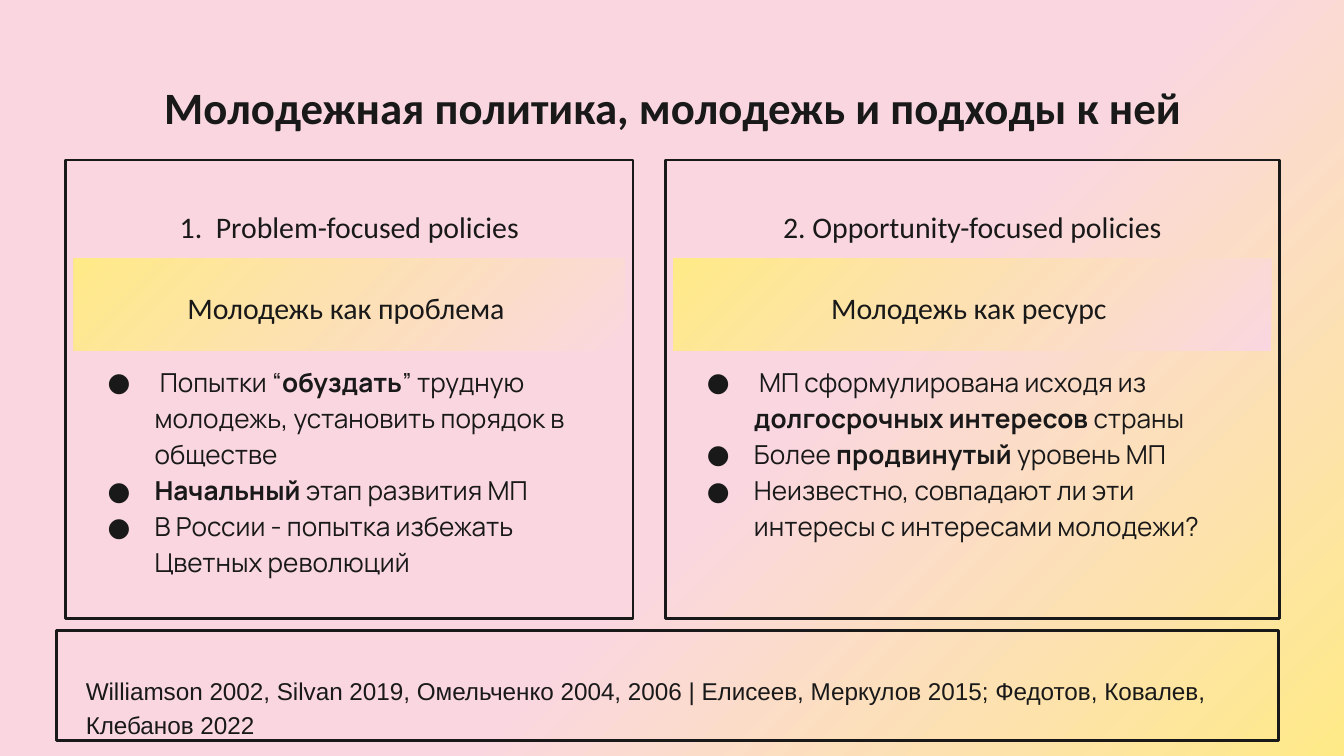
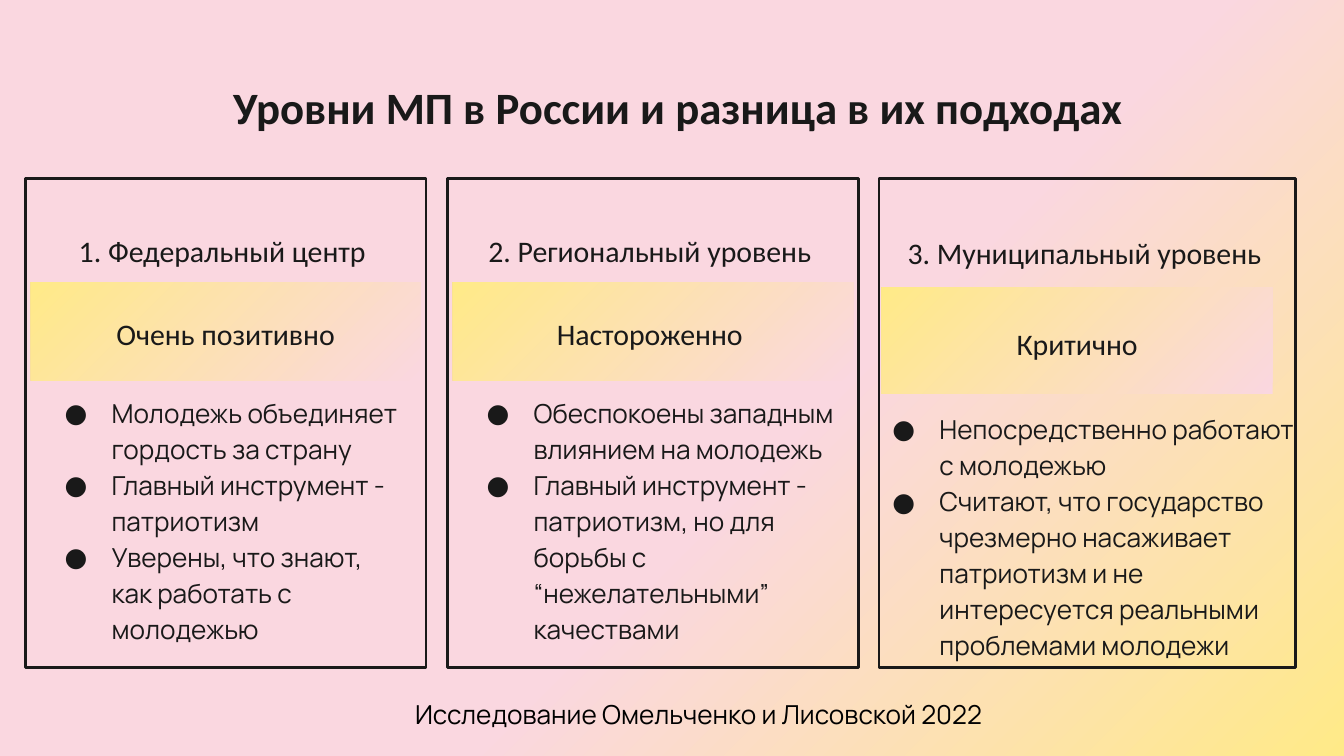
from copy import deepcopy

from lxml import etree
from pptx import Presentation
from pptx.dml.color import RGBColor
from pptx.enum.shapes import MSO_SHAPE
from pptx.enum.text import MSO_ANCHOR, MSO_AUTO_SIZE, PP_ALIGN
from pptx.oxml.ns import qn
from pptx.util import Inches, Pt

RECTANGLE = MSO_SHAPE.RECTANGLE
TOP, MIDDLE, BOTTOM = MSO_ANCHOR.TOP, MSO_ANCHOR.MIDDLE, MSO_ANCHOR.BOTTOM
LEFT, CENTER = PP_ALIGN.LEFT, PP_ALIGN.CENTER

INK = RGBColor(0x19, 0x19, 0x19)
BLACK = RGBColor(0, 0, 0)
PINK = RGBColor(0xFA, 0xD7, 0xE0)
YELLOW = RGBColor(0xFF, 0xEA, 0x88)

TWO_CONTENT, COMPARISON = 3, 4
TITLE_BOX = (0.79, 0.49, 8.43, 0.63)
GRADIENT_ANGLE = 135

TEXT_FRAME = {
    "word_wrap": True,
    "auto_size": MSO_AUTO_SIZE.NONE,
    "margin_left": Inches(0.1),
    "margin_right": Inches(0.1),
    "margin_top": Inches(0.1),
    "margin_bottom": Inches(0.1),
}
PARAGRAPH = {"space_before": Pt(0), "space_after": Pt(0)}
TITLE_FONT = {"name": "Calibri", "size": Pt(24), "bold": True}
HEADING_FONT = {"name": "Calibri", "size": Pt(16), "bold": False}
LIST_FONT = {"name": "Manrope", "size": Pt(14), "bold": False}
SOURCE_FONT = {"name": "Arial", "size": Pt(13), "bold": False}


def apply(target, values):
    for name, value in values.items():
        setattr(target, name, value)


def inches(box):
    return [Inches(length) for length in box]


def place(shape, box):
    apply(shape, dict(zip(("left", "top", "width", "height"), inches(box))))


def fill_gradient(fill, start, end, end_position=1.0):
    fill.gradient()
    fill.gradient_angle = GRADIENT_ANGLE
    first, last = fill.gradient_stops
    first.color.rgb, first.position = start, 0
    last.color.rgb, last.position = end, end_position


def set_background(master):
    """Yellow corner fading to pink, shared by all slides."""
    fill_gradient(master.background.fill, YELLOW, PINK, 0.42)
    stops = master.element.find(".//" + qn("p:bgPr")).find(".//" + qn("a:gsLst"))
    pink_end = deepcopy(stops[-1])
    pink_end.set("pos", "100000")
    stops.append(pink_end)


def add_bullet(paragraph):
    properties = paragraph._p.get_or_add_pPr()
    properties.set("marL", str(Inches(0.5)))
    properties.set("indent", str(-Inches(0.35)))
    colour = etree.SubElement(properties, qn("a:buClr"))
    etree.SubElement(colour, qn("a:srgbClr"), val=str(INK))
    etree.SubElement(properties, qn("a:buFont"), typeface="Manrope")
    etree.SubElement(properties, qn("a:buChar"), char="●")


def write(shape, lines, font, align=LEFT, anchor=TOP, spacing=1.15,
          color=INK, bullets=False):
    """Fill a shape with paragraphs; text between asterisks is bold."""
    frame = shape.text_frame
    apply(frame, {**TEXT_FRAME, "vertical_anchor": anchor})
    for number, line in enumerate(lines):
        paragraph = frame.add_paragraph() if number else frame.paragraphs[0]
        apply(paragraph, {**PARAGRAPH, "alignment": align, "line_spacing": spacing})
        if bullets:
            add_bullet(paragraph)
        for part, text in enumerate(line.split("*")):
            if text:
                run = paragraph.add_run()
                run.text = text
                apply(run.font, font)
                run.font.color.rgb = color
                if part % 2:
                    run.font.bold = True


def add_text(slide, box, text, font, **layout):
    write(slide.shapes.add_textbox(*inches(box)), [text], font, **layout)


def add_frame(slide, box):
    frame = slide.shapes.add_shape(RECTANGLE, *inches(box))
    frame.shadow.inherit = False
    frame.fill.background()
    frame.line.color.rgb = INK
    frame.line.width = Pt(1.5)


def add_band(slide, box, text):
    band = slide.shapes.add_shape(RECTANGLE, *inches(box))
    band.shadow.inherit = False
    band.line.fill.background()
    fill_gradient(band.fill, PINK, YELLOW)
    write(band, [text], HEADING_FONT, align=CENTER, anchor=MIDDLE)


def stack_boxes(frame, inset, row, overlap, list_height):
    """Frame, heading, band and list boxes, stacked inside the frame."""
    left, top, width, _ = frame
    left, top, width = left + inset, top + 0.04, width - 2 * inset
    return (
        frame,
        (left, top, width, row),
        (left, top + row, width, row),
        (left, top + 2 * row - overlap, width, list_height),
    )


def add_panel(slide, list_holder, boxes, heading, attitude, points):
    frame_box, heading_box, band_box, list_box = boxes
    add_frame(slide, frame_box)
    place(list_holder, list_box)
    write(list_holder, points, LIST_FONT, bullets=True)
    add_band(slide, band_box, attitude)
    add_text(slide, heading_box, heading, HEADING_FONT, align=CENTER, anchor=BOTTOM)


def add_slide(deck, layout, title, panels):
    slide = deck.slides.add_slide(deck.slide_layouts[layout])
    place(slide.shapes.title, TITLE_BOX)
    write(slide.shapes.title, [title], TITLE_FONT, align=CENTER, spacing=1.0)
    holders = list(slide.placeholders)[1:]
    for holder, panel in zip(holders, panels):
        add_panel(slide, holder, *panel)
    for unused in holders[len(panels):]:
        unused.element.getparent().remove(unused.element)
    return slide


def add_approaches(deck):
    size = {"inset": 0.06, "row": 0.69, "overlap": 0.02, "list_height": 1.85}
    slide = add_slide(deck, TWO_CONTENT, "Молодежная политика, молодежь и подходы к ней", [
        (stack_boxes((0.49, 1.19, 4.22, 3.41), **size),
         "1.  Problem-focused policies", "Молодежь как проблема ",
         [" Попытки “*обуздать*” трудную молодежь, установить порядок в обществе",
          "*Начальный *этап развития МП",
          "В России - попытка избежать Цветных революций"]),
        (stack_boxes((4.95, 1.19, 4.57, 3.41), **size),
         "2. Opportunity-focused policies", "Молодежь как ресурс ",
         [" МП сформулирована исходя из *долгосрочных интересов* страны",
          "Более *продвинутый *уровень МП",
          "Неизвестно, совпадают ли эти интересы с интересами молодежи?"]),
    ])
    add_frame(slide, (0.42, 4.69, 9.09, 0.82))
    add_text(slide, (0.54, 4.9, 8.84, 0.56),
             "Williamson 2002, Silvan 2019, Омельченко 2004, 2006 | Елисеев, "
             "Меркулов 2015; Федотов, Ковалев, Клебанов 2022", SOURCE_FONT)


def add_levels(deck):
    size = {"inset": 0.04, "row": 0.73, "overlap": 0.01, "list_height": 1.98}
    municipal_boxes = (
        (6.54, 1.33, 3.1, 3.64),
        (6.54, 1.48, 3.06, 0.63),
        (6.56, 2.14, 2.91, 0.79),
        (6.39, 2.94, 3.39, 0.87),
    )
    slide = add_slide(deck, COMPARISON, " Уровни МП в России и разница в их подходах", [
        (stack_boxes((0.19, 1.33, 2.98, 3.64), **size),
         "1. Федеральный центр ", "Очень позитивно",
         ["Молодежь объединяет гордость за страну",
          "Главный инструмент - патриотизм",
          "Уверены, что знают, как работать с молодежью"]),
        (stack_boxes((3.33, 1.33, 3.06, 3.64), **size),
         "2. Региональный уровень ", "Настороженно ",
         ["Обеспокоены западным влиянием на молодежь",
          "Главный инструмент - патриотизм, но для борьбы с “нежелательными” качествами"]),
        (municipal_boxes,
         " 3. Муниципальный уровень ", "Критично",
         ["Непосредственно работают с молодежью",
          "Считают, что государство чрезмерно насаживает патриотизм и не "
          "интересуется реальными проблемами молодежи"]),
    ])
    add_text(slide, (2.99, 5.1, 7.27, 0.44), "Исследование Омельченко и Лисовской 2022",
             LIST_FONT, spacing=1.0, color=BLACK)


def main():
    deck = Presentation()
    deck.slide_width = Inches(10)
    deck.slide_height = deck.slide_width * 9 // 16
    set_background(deck.slide_master)
    add_approaches(deck)
    add_levels(deck)
    deck.save("out.pptx")


if __name__ == "__main__":
    main()
